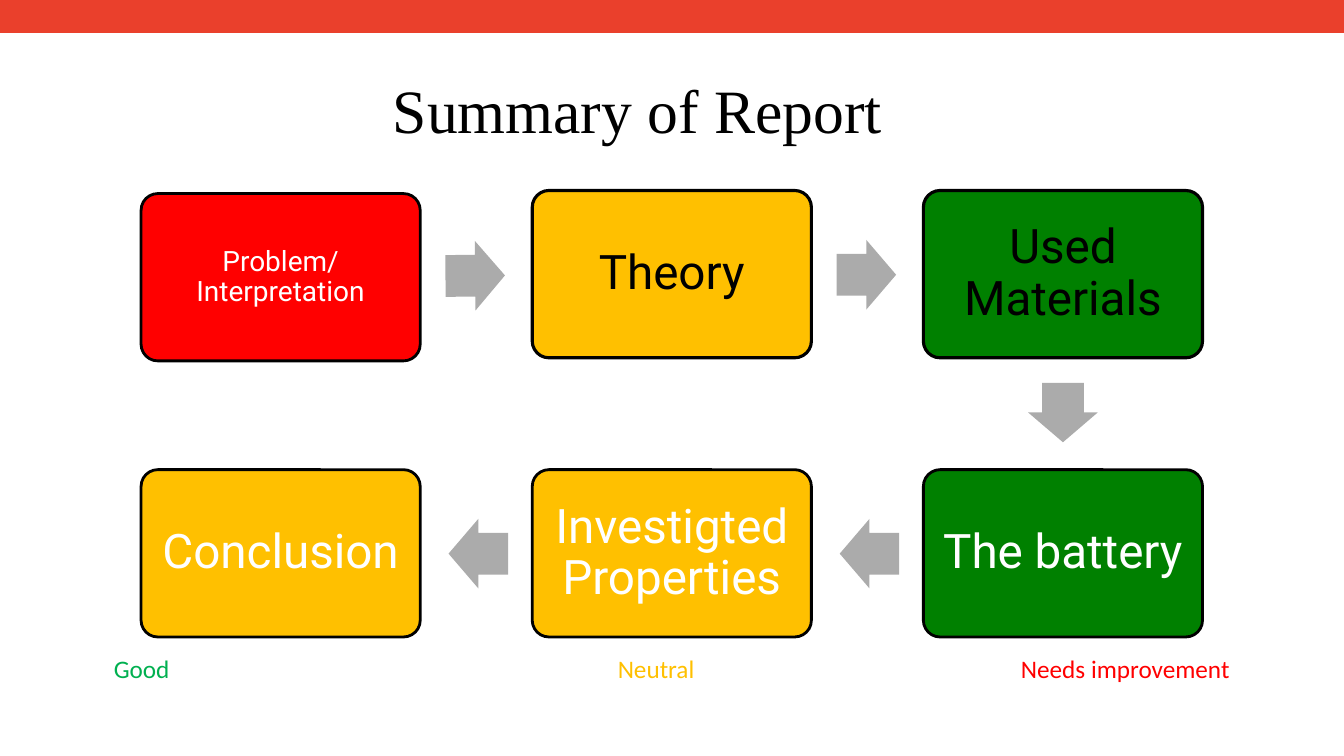
from dataclasses import dataclass

from pptx import Presentation
from pptx.dml.color import RGBColor
from pptx.enum.shapes import MSO_CONNECTOR as Link, MSO_SHAPE as Form
from pptx.enum.text import MSO_ANCHOR as Anchor, MSO_AUTO_SIZE as Fit, PP_ALIGN as Align
from pptx.oxml.ns import qn
from pptx.slide import Slide
from pptx.text.text import TextFrame, _Paragraph as Para
from pptx.util import Pt
from lxml.etree import SubElement

HUES = {
    "bar": "EA402C", "arrow": "ABABAB", "black": "000000", "white": "FFFFFF",
    "red": "FF0000", "amber": "FFC000", "green": "008000", "good": "00B050",
}
WIDE, HIGH = 960, 540
LEFT, TOP = 100.8, 136.1
STEP, DROP = 279.4, 199.4
BOX_W, BOX_H = 199.4, 119.5
ARROW_W, ARROW_H = 42.5, 49.7


@dataclass
class Stage:
    text: str
    col: int
    row: int
    fill: str
    ink: str
    edge: float = 2
    size: float = 34
    inset: float = 10
    shift: float = 0


@dataclass
class Arrow:
    left: float
    top: float
    turn: float = 0


STAGES = [
    Stage("Problem/Interpretation", 0, 0, "red", "white", size=20, inset=6, shift=2.2),
    Stage("Theory", 1, 0, "amber", "black", edge=2.25),
    Stage("Used Materials", 2, 0, "green", "black", edge=2.25),
    Stage("The battery", 2, 1, "green", "white"),
    Stage("Investigted Properties", 1, 1, "amber", "white"),
    Stage("Conclusion", 0, 1, "amber", "white"),
]
ARROWS = [
    Arrow(318.2, 172.1, 359.5),
    Arrow(318.2 + STEP, 171.4),
    Arrow(738, 269.8, 90),
    Arrow(320.4 + STEP, 370.6, 180),
    Arrow(320.4, 370.6, 180),
]
LEGEND = [("Good", "good"), ("\tNeutral", "amber"), ("\tNeeds improvement", "red")]
STOPS = [360, 648]


def hue(name: str) -> RGBColor:
    return RGBColor.from_string(HUES[name])


def write(para: Para, text: str, *, size: float, font: str, ink: str,
          align: Align = Align.CENTER, space: float = 0.9) -> None:
    para.alignment, para.line_spacing = align, space
    run = para.add_run()
    run.text = text
    run.font.size, run.font.name = Pt(size), font
    run.font.color.rgb = hue(ink)


def pad(frame: TextFrame, inset: float) -> None:
    frame.margin_left = frame.margin_right = Pt(inset)
    frame.margin_top = frame.margin_bottom = Pt(inset)
    frame.word_wrap, frame.auto_size = True, Fit.NONE
    frame.vertical_anchor = Anchor.MIDDLE


def add_bar(slide: Slide) -> None:
    bar = slide.shapes.add_connector(Link.STRAIGHT, Pt(0), Pt(11.5), Pt(WIDE), Pt(11.5))
    bar.line.color.rgb, bar.line.width = hue("bar"), Pt(24)
    SubElement(bar._element.spPr, qn("a:effectLst"))


def add_title(slide: Slide) -> None:
    title = slide.shapes.title
    title.left, title.top, title.width, title.height = Pt(66), Pt(29), Pt(779), Pt(104.4)
    pad(title.text_frame, 3.6)
    write(title.text_frame.paragraphs[0], "Summary of Report",
          size=44, font="Times New Roman", ink="black")


def add_stage(slide: Slide, stage: Stage) -> None:
    box = slide.shapes.add_shape(
        Form.ROUNDED_RECTANGLE, Pt(LEFT + stage.col * STEP),
        Pt(TOP + stage.row * DROP + stage.shift), Pt(BOX_W), Pt(BOX_H))
    box.adjustments[0] = 0.1
    box.shadow.inherit = False
    box.fill.solid()
    box.fill.fore_color.rgb = hue(stage.fill)
    box.line.color.rgb, box.line.width = hue("black"), Pt(stage.edge)
    pad(box.text_frame, stage.inset)
    write(box.text_frame.paragraphs[0], stage.text,
          size=stage.size, font="Roboto", ink=stage.ink)


def add_arrow(slide: Slide, arrow: Arrow) -> None:
    shape = slide.shapes.add_shape(
        Form.RIGHT_ARROW, Pt(arrow.left), Pt(arrow.top), Pt(ARROW_W), Pt(ARROW_H))
    shape.adjustments[0], shape.adjustments[1] = 0.6, 0.5
    shape.rotation = arrow.turn
    shape.shadow.inherit = False
    shape.fill.solid()
    shape.fill.fore_color.rgb = hue("arrow")
    shape.line.fill.background()


def add_legend(slide: Slide) -> None:
    """Set the three ratings on one line, spaced by tab stops."""
    box = slide.shapes.add_textbox(Pt(74.2), Pt(463), Pt(817), Pt(29))
    box.text_frame.word_wrap = True
    para = box.text_frame.paragraphs[0]
    for text, ink in LEGEND:
        write(para, text, size=18, font="Calibri", ink=ink, align=Align.LEFT, space=1.0)
    tabs = SubElement(para._p.get_or_add_pPr(), qn("a:tabLst"))
    for stop in STOPS:
        SubElement(tabs, qn("a:tab"), pos=str(Pt(stop)), algn="l")


def main() -> None:
    deck = Presentation()
    deck.slide_width, deck.slide_height = Pt(WIDE), Pt(HIGH)
    slide = deck.slides.add_slide(deck.slide_layouts[5])
    add_bar(slide)
    add_title(slide)
    for stage in STAGES:
        add_stage(slide, stage)
    for arrow in ARROWS:
        add_arrow(slide, arrow)
    add_legend(slide)
    deck.save("out.pptx")


if __name__ == "__main__":
    main()
